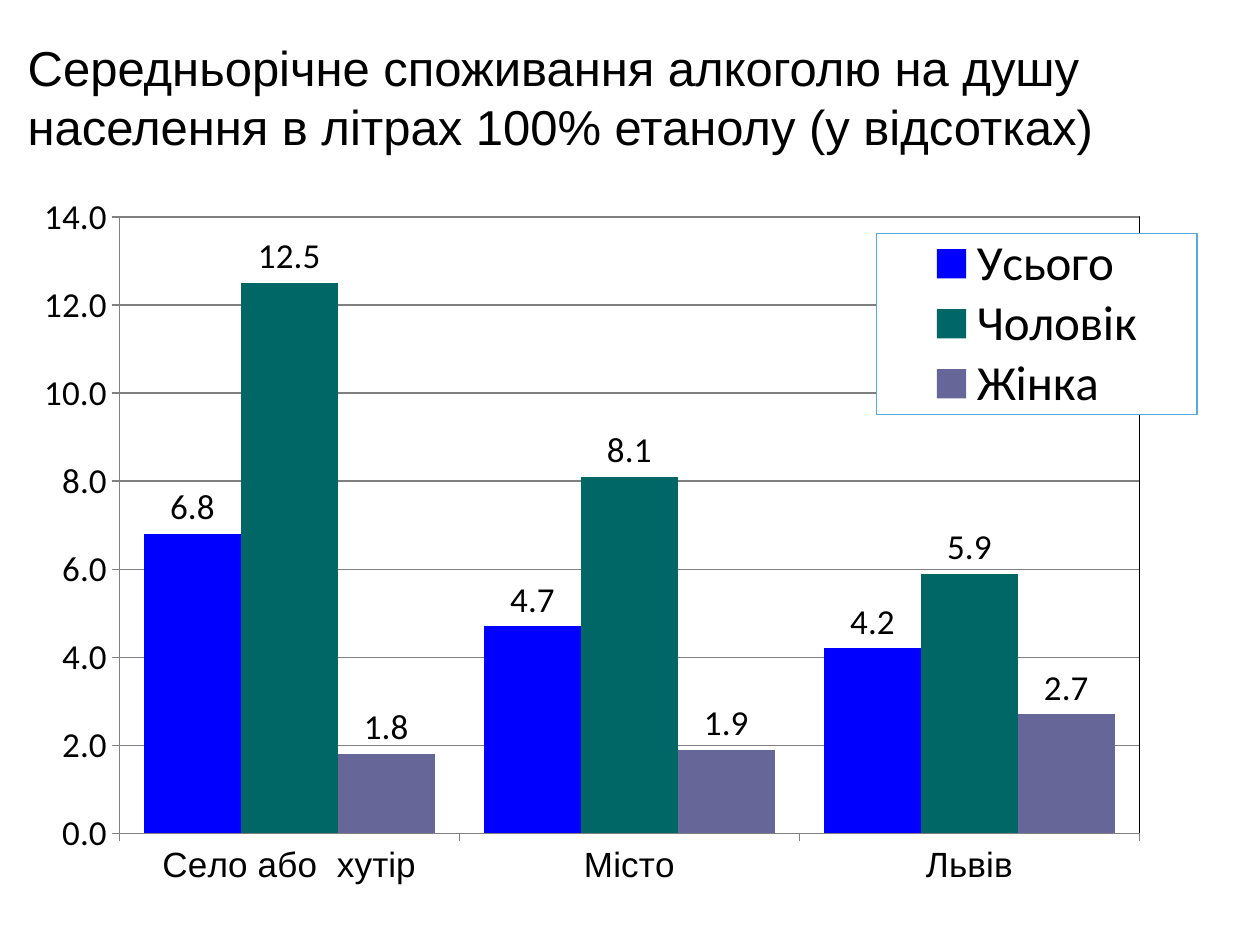
import pptx
import pptx.chart.data
import pptx.dml.color
import pptx.enum.chart
import pptx.enum.text
import pptx.util
from lxml import etree
from pptx.oxml import parse_xml
from pptx.oxml.ns import nsdecls, qn

Pt = pptx.util.Pt

TITLE = "Середньорічне споживання алкоголю на душу населення в літрах 100% етанолу (у відсотках)"
CATEGORIES = ["Село або  хутір", "Місто", "Львів"]
SERIES = [
    ("Усього", (6.8, 4.7, 4.2), "0000FF"),
    ("Чоловік", (12.5, 8.1, 5.9), "006666"),
    ("Жінка", (1.8, 1.9, 2.7), "666699"),
]
NUMBER_FORMAT = "0.0"

THEME = {
    "text": "000000",
    "grid": "808080",
    "legend_line": "5BA9DC",
    "white": "FFFFFF",
    "title": {"name": "Arial", "size": Pt(28), "bold": False},
    "chart": {"name": "Calibri", "size": Pt(18)},
    "category": {"name": "Arial", "size": Pt(20), "bold": False},
    "value": {"name": "Calibri", "size": Pt(20), "bold": False},
    "legend": {"name": "Calibri", "size": Pt(28), "bold": False},
}

SLIDE_SIZE = (Pt(720), Pt(540))
TITLE_BOX = (Pt(8.64), Pt(4.32), Pt(720), Pt(101.5))
CHART_BOX = (Pt(25.2), Pt(111.6), Pt(671), Pt(414))
# Inner areas, in points from the slide's top left corner
PLOT_BOX = (Pt(67.4), Pt(123.4), Pt(583.7), Pt(352.8))
LEGEND_BOX = (Pt(500.7), Pt(132.7), Pt(183.3), Pt(103.7))


def color(name):
    return pptx.dml.color.RGBColor.from_string(THEME.get(name, name))


def set_values(target, values):
    for name, value in values.items():
        setattr(target, name, value)


def style_font(font, style):
    set_values(font, THEME[style])
    font.color.rgb = color("text")


def style_line(line, name, width=0.75):
    line.color.rgb = color(name)
    line.width = Pt(width)


def manual_layout(box, inner=False):
    """Return a c:layout that places a chart part at a slide position."""
    left, top, width, height = box
    chart_left, chart_top, chart_width, chart_height = CHART_BOX
    values = {"xMode": "edge", "yMode": "edge",
              "x": round((left - chart_left) / chart_width, 4),
              "y": round((top - chart_top) / chart_height, 4),
              "w": round(width / chart_width, 4),
              "h": round(height / chart_height, 4)}
    if inner:
        values = {"layoutTarget": "inner", **values}
    layout = etree.Element(qn("c:layout"))
    manual = etree.SubElement(layout, qn("c:manualLayout"))
    for name, value in values.items():
        etree.SubElement(manual, qn("c:" + name)).set("val", str(value))
    return layout


def box_format(fill, line):
    fill_xml = f'<a:solidFill><a:srgbClr val="{THEME[fill]}"/></a:solidFill>' if fill else "<a:noFill/>"
    return parse_xml(
        f'<c:spPr {nsdecls("c", "a")}>{fill_xml}<a:ln w="9525"><a:solidFill>'
        f'<a:srgbClr val="{THEME[line]}"/></a:solidFill></a:ln></c:spPr>')


def replace_layout(element, layout, before):
    for old in element.findall(qn("c:layout")):
        element.remove(old)
    element.find(qn(before)).addprevious(layout)


def add_title(slide):
    title = slide.shapes.title
    set_values(title, dict(zip(("left", "top", "width", "height"), TITLE_BOX)))
    frame = title.text_frame
    set_values(frame, {"text": TITLE, "word_wrap": True,
                       "auto_size": pptx.enum.text.MSO_AUTO_SIZE.NONE,
                       "vertical_anchor": pptx.enum.text.MSO_ANCHOR.MIDDLE})
    paragraph = frame.paragraphs[0]
    paragraph.alignment = pptx.enum.text.PP_ALIGN.LEFT
    style_font(paragraph.runs[0].font, "title")


def style_axes(chart):
    outside = pptx.enum.chart.XL_TICK_MARK.OUTSIDE
    for axis, style in ((chart.category_axis, "category"), (chart.value_axis, "value")):
        axis.major_tick_mark = outside
        style_font(axis.tick_labels.font, style)
        style_line(axis.format.line, "grid")
    value_axis = chart.value_axis
    set_values(value_axis, {"minimum_scale": 0, "maximum_scale": 14, "major_unit": 2,
                            "has_major_gridlines": True})
    set_values(value_axis.tick_labels, {"number_format": NUMBER_FORMAT,
                                        "number_format_is_linked": False})
    style_line(value_axis.major_gridlines.format.line, "grid")


def style_columns(chart):
    plot = chart.plots[0]
    set_values(plot, {"gap_width": 51, "overlap": 0, "vary_by_categories": False})
    for series, (_, _, fill) in zip(plot.series, SERIES):
        series.format.fill.solid()
        series.format.fill.fore_color.rgb = color(fill)
        labels = series.data_labels
        set_values(labels, {"show_value": True, "number_format": NUMBER_FORMAT,
                            "number_format_is_linked": False,
                            "position": pptx.enum.chart.XL_LABEL_POSITION.OUTSIDE_END})
        style_font(labels.font, "value")


def style_legend(chart):
    chart.has_legend = True
    legend = chart.legend
    set_values(legend, {"position": pptx.enum.chart.XL_LEGEND_POSITION.RIGHT,
                        "include_in_layout": False})
    style_font(legend.font, "legend")
    element = chart.element.find(".//" + qn("c:legend"))
    replace_layout(element, manual_layout(LEGEND_BOX), "c:overlay")
    element.find(qn("c:txPr")).addprevious(box_format("white", "legend_line"))


def add_consumption_chart(slide):
    data = pptx.chart.data.CategoryChartData(number_format=NUMBER_FORMAT)
    data.categories = CATEGORIES
    for name, values, _ in SERIES:
        data.add_series(name, values)
    chart = slide.shapes.add_chart(
        pptx.enum.chart.XL_CHART_TYPE.COLUMN_CLUSTERED, *CHART_BOX, data).chart
    chart.has_title = False
    style_font(chart.font, "chart")
    style_axes(chart)
    style_columns(chart)
    style_legend(chart)
    plot_area = chart.element.find(".//" + qn("c:plotArea"))
    replace_layout(plot_area, manual_layout(PLOT_BOX, inner=True), "c:barChart")
    plot_area.append(box_format(None, "text"))


def main():
    presentation = pptx.Presentation()
    presentation.slide_width, presentation.slide_height = SLIDE_SIZE
    slide = presentation.slides.add_slide(presentation.slide_layouts.get_by_name("Title Only"))
    add_title(slide)
    add_consumption_chart(slide)
    presentation.save("out.pptx")


if __name__ == "__main__":
    main()
